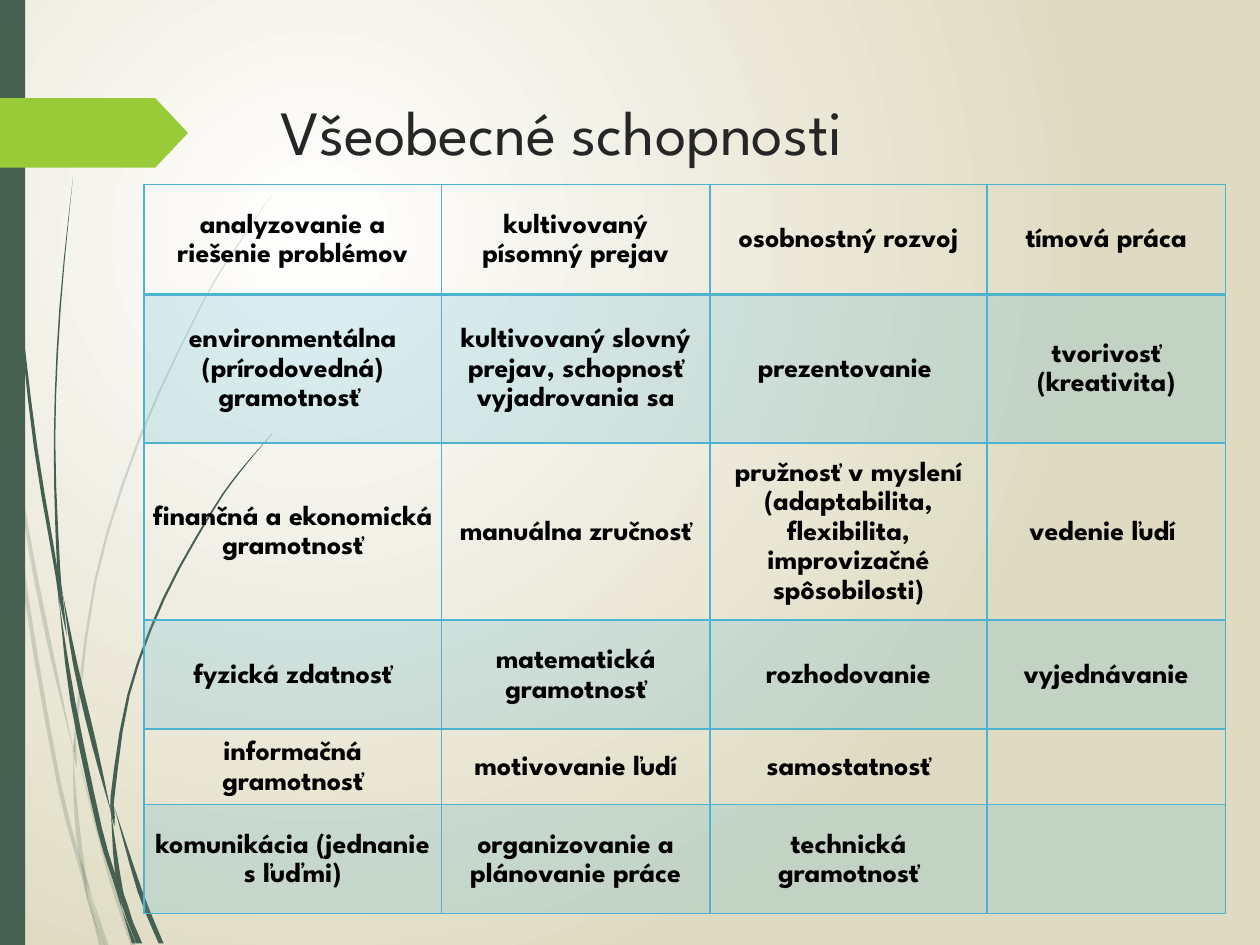
import pptx
import pptx.dml.color
import pptx.enum.dml
import pptx.enum.shapes
import pptx.enum.text
import pptx.oxml
import pptx.oxml.ns
import pptx.util
from lxml import etree

Cm = pptx.util.Cm
Pt = pptx.util.Pt
RGBColor = pptx.dml.color.RGBColor
qn = pptx.oxml.ns.qn
MIDDLE = pptx.enum.text.MSO_ANCHOR.MIDDLE

WHITE = RGBColor(0xFF, 0xFF, 0xFF)
SAND = RGBColor(0xDF, 0xDB, 0xC2)
FOREST = RGBColor(0x45, 0x5F, 0x51)
LIME = RGBColor(0x99, 0xCB, 0x38)
SKY = RGBColor(0x4E, 0xB3, 0xCF)
CHARCOAL = RGBColor(0x26, 0x26, 0x26)
BLACK = RGBColor(0, 0, 0)

FONT = "League Spartan"
TITLE_FORMAT = {"name": FONT, "size": Pt(36), "bold": False}
CELL_FORMAT = {"name": FONT, "size": Pt(16), "bold": True}
CELL_LAYOUT = {
    "margin_left": Cm(0.18), "margin_right": Cm(0.18),
    "margin_top": 0, "margin_bottom": 0, "vertical_anchor": MIDDLE,
}

# Each part of a grass blade is a list of (x, y, width) in centimetres.
PALE_BLADES = [
    [(0, 7.16, 0), (0.09, 8, 0.06), (0.2, 8.89, 0)],
    [(0.25, 8.76, 0), (0.62, 11.1, 0.08), (1.05, 13.23, 0.08), (1.5, 15.21, 0)],
    [(1.55, 15.14, 0), (2.2, 17.6, 0.08), (2.69, 19.07, 0.1)],
    [(1.85, 18.06, 0), (2.15, 19.07, 0.08)],
    [(0.2, 8.89, 0), (0.52, 11.94, 0.08), (1.18, 15.75, 0.08),
     (1.63, 17.48, 0.08), (1.78, 18.14, 0)],
    [(1.47, 15.21, 0), (1.54, 16.41, 0.08), (1.67, 17.46, 0.08), (1.85, 18.06, 0)],
    [(5.51, 3.89, 0), (4.74, 5.02, 0.03), (4.03, 6.21, 0.03), (2.81, 8.85, 0.05),
     (1.92, 11.72, 0.05), (1.52, 14.83, 0.05), (1.55, 15.14, 0)],
    [(1.78, 18.14, 0), (2.04, 19.07, 0.08)],
    [(1.5, 14.88, 0), (1.51, 15.2, 0.08), (1.55, 15.49, 0)],
    [(1.65, 17.35, 0), (1.79, 18.1, 0.1), (2.1, 19.07, 0.03)],
]
DARK_BLADES = [
    [(0.06, 0, 0.02), (0.14, 2.79, 0.03), (0.37, 5.92, 0.04),
     (0.72, 9.02, 0.07), (1.15, 11.6, 0.06), (1.19, 12.22, 0)],
    [(1.27, 11.99, 0), (1.52, 13.4, 0.09), (1.9, 15.01, 0.1), (2.24, 16.38, 0)],
    [(2.31, 16.28, 0), (2.82, 17.96, 0.1), (3.25, 19.02, 0.1)],
    [(1.19, 12.12, 0), (1.47, 14.15, 0.1), (2.01, 16.71, 0.1),
     (2.32, 17.75, 0.08), (2.46, 18.34, 0)],
    [(1.47, 3.58, 0), (1.21, 6.22, 0.03), (1.1, 8.86, 0.03),
     (1.18, 11.4, 0.06), (1.27, 11.99, 0)],
    [(2.54, 18.26, 0), (2.83, 19.02, 0.08)],
    [(1.14, 11.4, 0), (1.22, 11.99, 0.08), (1.35, 12.83, 0)],
    [(5.49, 8.74, 0), (4.85, 9.49, 0.03), (4.28, 10.3, 0.04), (3.3, 12.07, 0.05),
     (2.59, 14.01, 0.05), (2.27, 16.05, 0.08), (2.31, 16.28, 0)],
    [(2.46, 18.34, 0), (2.7, 19.02, 0.08)],
    [(2.24, 16.38, 0), (2.37, 17.6, 0.1), (2.54, 18.26, 0)],
    [(2.24, 16.03, 0), (2.27, 16.35, 0.08), (2.31, 16.66, 0)],
    [(2.31, 17.55, 0), (2.52, 18.26, 0.12), (2.77, 19.02, 0.05)],
]

COLUMN_WIDTHS = [6, 5.41, 5.59, 4.8]
ROW_HEIGHTS = [2.21, 3, 3.57, 2.2, 1.52, 2.2]
ABILITIES = [
    ["analyzovanie a riešenie problémov", "kultivovaný písomný prejav",
     "osobnostný rozvoj", "tímová práca"],
    ["environmentálna (prírodovedná) gramotnosť ",
     "kultivovaný slovný prejav, schopnosť vyjadrovania sa",
     "prezentovanie ", "tvorivosť (kreativita)"],
    ["finančná a ekonomická gramotnosť", "manuálna zručnosť",
     "pružnosť v myslení (adaptabilita, flexibilita, improvizačné spôsobilosti)",
     "vedenie ľudí "],
    ["fyzická zdatnosť", "matematická gramotnosť", "rozhodovanie", "vyjednávanie"],
    ["informačná gramotnosť", "motivovanie ľudí", "samostatnosť", ""],
    ["komunikácia (jednanie s ľuďmi)", "organizovanie a plánovanie práce",
     "technická gramotnosť", ""],
]


def apply_format(target, values):
    for attribute, value in values.items():
        setattr(target, attribute, value)


def set_opacity(fill_parent, percent):
    color = fill_parent.find(qn("a:solidFill"))[0]
    etree.SubElement(color, qn("a:alpha"), val=str(percent * 1000))


def paint_background(slide):
    fill = slide.background.fill
    fill.gradient()
    for stop, color, position in zip(fill.gradient_stops, (WHITE, SAND), (0, 1)):
        stop.color.rgb = color
        stop.position = position
    gradient = next(slide.element.iter(qn("a:gradFill")))
    circle = etree.Element(qn("a:path"), path="circle")
    etree.SubElement(circle, qn("a:fillToRect"),
                     l="50000", t="50000", r="100000", b="100000")
    gradient.replace(gradient.find(qn("a:lin")), circle)


def paint_shape(shape, color):
    shape.shadow.inherit = False
    shape.fill.solid()
    shape.fill.fore_color.rgb = color
    shape.line.fill.background()


def smooth_curve(knots, steps=3):
    """Return points of a Catmull-Rom curve through the knots."""
    padded = [knots[0], *knots, knots[-1]]
    curve = []
    for before, start, end, after in zip(padded, padded[1:], padded[2:], padded[3:]):
        for step in range(steps):
            t = step / steps
            curve.append(tuple(
                b + ((c - a) * t + (2 * a - 5 * b + 4 * c - d) * t ** 2
                     + (3 * b - a - 3 * c + d) * t ** 3) / 2
                for a, b, c, d in zip(before, start, end, after)))
    return curve + [knots[-1]]


def add_blade(slide, knots, opacity=100):
    curve = smooth_curve(knots)
    left = [(Cm(max(x - width / 2, 0)), Cm(y)) for x, y, width in curve]
    right = [(Cm(x + width / 2), Cm(y)) for x, y, width in reversed(curve)]
    builder = slide.shapes.build_freeform(*left[0])
    builder.add_line_segments(left[1:] + right, close=True)
    blade = builder.convert_to_shape()
    paint_shape(blade, FOREST)
    if opacity < 100:
        set_opacity(blade.element.spPr, opacity)


def add_side_decor(slide):
    for blade in PALE_BLADES:
        add_blade(slide, blade, opacity=20)
    for blade in DARK_BLADES:
        add_blade(slide, blade)
    kinds = pptx.enum.shapes.MSO_SHAPE
    side_bar = slide.shapes.add_shape(kinds.RECTANGLE, 0, 0, Cm(0.51), Cm(19.05))
    paint_shape(side_bar, FOREST)
    pointer = slide.shapes.add_shape(kinds.PENTAGON, 0, Cm(1.98), Cm(3.79), Cm(1.4))
    pointer.adjustments[0] = 0.47
    paint_shape(pointer, LIME)


def set_title(slide, text):
    title = slide.shapes.title
    apply_format(title, {"left": Cm(5.41), "top": Cm(1.63),
                         "width": Cm(18.31), "height": Cm(1.98)})
    title.text_frame.text = text
    title.text_frame.vertical_anchor = MIDDLE
    paragraph = title.text_frame.paragraphs[0]
    paragraph.alignment = pptx.enum.text.PP_ALIGN.LEFT
    apply_format(paragraph.runs[0].font, TITLE_FORMAT)
    paragraph.runs[0].font.color.rgb = CHARCOAL


def add_border(cell, side, points):
    properties = cell._tc.get_or_add_tcPr()
    border = etree.SubElement(properties, qn(f"a:ln{side}"), w=str(Pt(points)))
    solid = etree.SubElement(border, qn("a:solidFill"))
    etree.SubElement(solid, qn("a:srgbClr"), val=str(SKY))


def fill_cell(cell, text, row):
    apply_format(cell, CELL_LAYOUT)
    for side in "LRTB":
        under_header = (row, side) in ((0, "B"), (1, "T"))
        add_border(cell, side, 2 if under_header else 1)
    if row % 2:
        cell.fill.solid()
        cell.fill.fore_color.rgb = SKY
        set_opacity(cell._tc.tcPr, 20)
    else:
        cell.fill.background()
    if text:
        paragraph = cell.text_frame.paragraphs[0]
        paragraph.alignment = pptx.enum.text.PP_ALIGN.CENTER
        paragraph.line_spacing = 1.15
        run = paragraph.add_run()
        run.text = text
        apply_format(run.font, CELL_FORMAT)
        run.font.color.rgb = BLACK


def add_abilities_table(slide):
    table = slide.shapes.add_table(
        len(ROW_HEIGHTS), len(COLUMN_WIDTHS), Cm(2.9), Cm(3.72),
        Cm(sum(COLUMN_WIDTHS)), Cm(sum(ROW_HEIGHTS))).table
    apply_format(table, {"first_row": False, "horz_banding": False})
    for column, width in zip(table.columns, COLUMN_WIDTHS):
        column.width = Cm(width)
    for row, height in zip(table.rows, ROW_HEIGHTS):
        row.height = Cm(height)
    for row, texts in enumerate(ABILITIES):
        for column, text in enumerate(texts):
            fill_cell(table.cell(row, column), text, row)


def main():
    presentation = pptx.Presentation()
    apply_format(presentation, {"slide_width": Cm(25.4), "slide_height": Cm(19.05)})
    slide = presentation.slides.add_slide(presentation.slide_layouts[5])
    paint_background(slide)
    add_side_decor(slide)
    set_title(slide, "Všeobecné schopnosti")
    add_abilities_table(slide)
    presentation.save("out.pptx")


if __name__ == "__main__":
    main()
